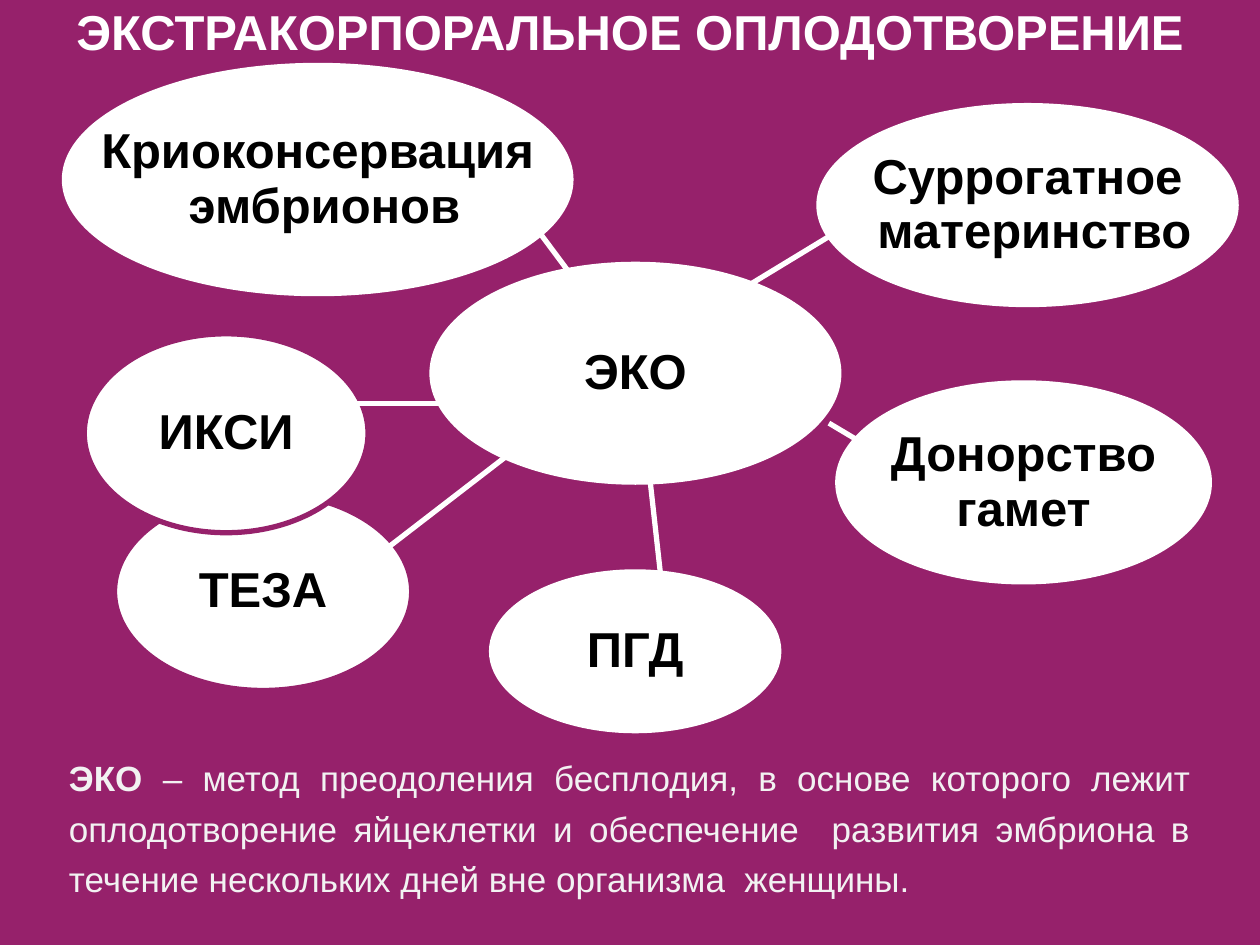
import pptx
import pptx.util
import pptx.dml.color
import pptx.enum.shapes
import pptx.enum.text
from dataclasses import dataclass

Cm = pptx.util.Cm
Pt = pptx.util.Pt
Align = pptx.enum.text.PP_ALIGN
Anchor = pptx.enum.text.MSO_ANCHOR


@dataclass(frozen=True)
class Theme:
    plum: str = "96216B"
    white: str = "FFFFFF"
    black: str = "000000"
    pale: str = "F2F2F2"
    font: str = "Arial"
    head: int = 28
    body: int = 20
    line: int = 3
    tight: float = 0.93
    loose: float = 1.2


THEME = Theme()

BUBBLES = [
    ("ТЕЗА", (2.31, 9.93, 5.99, 3.99), THEME.plum),
    ("ЭКО", (8.71, 5.33, 8.2, 4.39), THEME.white),
    ("Суррогатное\n материнство", (16.51, 2.13, 8.41, 4.01), THEME.white),
    ("Донорство\nгамет", (16.89, 7.72, 7.49, 4.01), THEME.white),
    ("ПГД", (9.91, 11.53, 5.79, 3.2), THEME.white),
    ("ИКСИ", (1.7, 6.73, 5.72, 4.01), THEME.plum),
    ("Криоконсервация\n эмбрионов", (1.3, 1.32, 10.21, 4.6), THEME.white),
]

LINKS = [
    (17.12, 4.52, 15.11, 5.74),
    (10.31, 9.12, 7.7, 11.13),
    (9.09, 8.13, 7.11, 8.13),
    (10.9, 4.72, 11.51, 5.54),
    (17.7, 9.12, 16.71, 8.53),
    (13.11, 9.73, 13.31, 11.53),
]

TERM = "ЭКО"
GLOSS = (" – метод преодоления бесплодия, в основе которого лежит "
         "оплодотворение яйцеклетки и обеспечение  развития эмбриона в "
         "течение нескольких дней вне организма  женщины.")


def tint(code):
    return pptx.dml.color.RGBColor.from_string(code)


def style(run, size, color, bold):
    run.font.name = THEME.font
    run.font.size = Pt(size)
    run.font.bold = bold
    run.font.color.rgb = tint(color)


def label(frame, text, color):
    frame.text = text
    frame.word_wrap = False
    frame.vertical_anchor = Anchor.MIDDLE
    for para in frame.paragraphs:
        para.alignment = Align.CENTER
        para.line_spacing = THEME.tight
        for run in para.runs:
            style(run, THEME.head, color, True)


def add_title(slide, text):
    title = slide.shapes.title
    title.left, title.top = Cm(1.17), Cm(0)
    title.width, title.height = Cm(23.06), Cm(1.37)
    label(title.text_frame, text, THEME.white)


def add_bubble(slide, text, box, edge):
    oval = slide.shapes.add_shape(
        pptx.enum.shapes.MSO_SHAPE.OVAL, *map(Cm, box))
    oval.shadow.inherit = False
    oval.fill.solid()
    oval.fill.fore_color.rgb = tint(THEME.white)
    oval.line.color.rgb = tint(edge)
    oval.line.width = Pt(THEME.line)
    label(oval.text_frame, text, THEME.black)


def add_link(slide, ends):
    link = slide.shapes.add_connector(
        pptx.enum.shapes.MSO_CONNECTOR.STRAIGHT, *map(Cm, ends))
    link.line.color.rgb = tint(THEME.white)
    link.line.width = Pt(THEME.line)
    props = link._element.spPr
    props.append(pptx.oxml.parse_xml(
        '<a:effectLst xmlns:a='
        '"http://schemas.openxmlformats.org/drawingml/2006/main"/>'))


def add_gloss(slide):
    box = slide.shapes.add_textbox(Cm(1.14), Cm(14.96), Cm(23.11), Cm(3.76))
    box.text_frame.word_wrap = True
    para = box.text_frame.paragraphs[0]
    para.alignment = Align.JUSTIFY
    para.line_spacing = THEME.loose
    para.space_after = Pt(18)
    for text, bold in ((TERM, True), (GLOSS, False)):
        run = para.add_run()
        run.text = text
        style(run, THEME.body, THEME.pale, bold)


def main():
    deck = pptx.Presentation()
    deck.slide_width, deck.slide_height = Cm(25.4), Cm(19.05)
    slide = deck.slides.add_slide(deck.slide_layouts[5])
    slide.background.fill.solid()
    slide.background.fill.fore_color.rgb = tint(THEME.plum)
    add_title(slide, "ЭКСТРАКОРПОРАЛЬНОЕ ОПЛОДОТВОРЕНИЕ")
    for text, box, edge in BUBBLES:
        add_bubble(slide, text, box, edge)
    for ends in LINKS:
        add_link(slide, ends)
    add_gloss(slide)
    deck.save("out.pptx")


if __name__ == "__main__":
    main()
